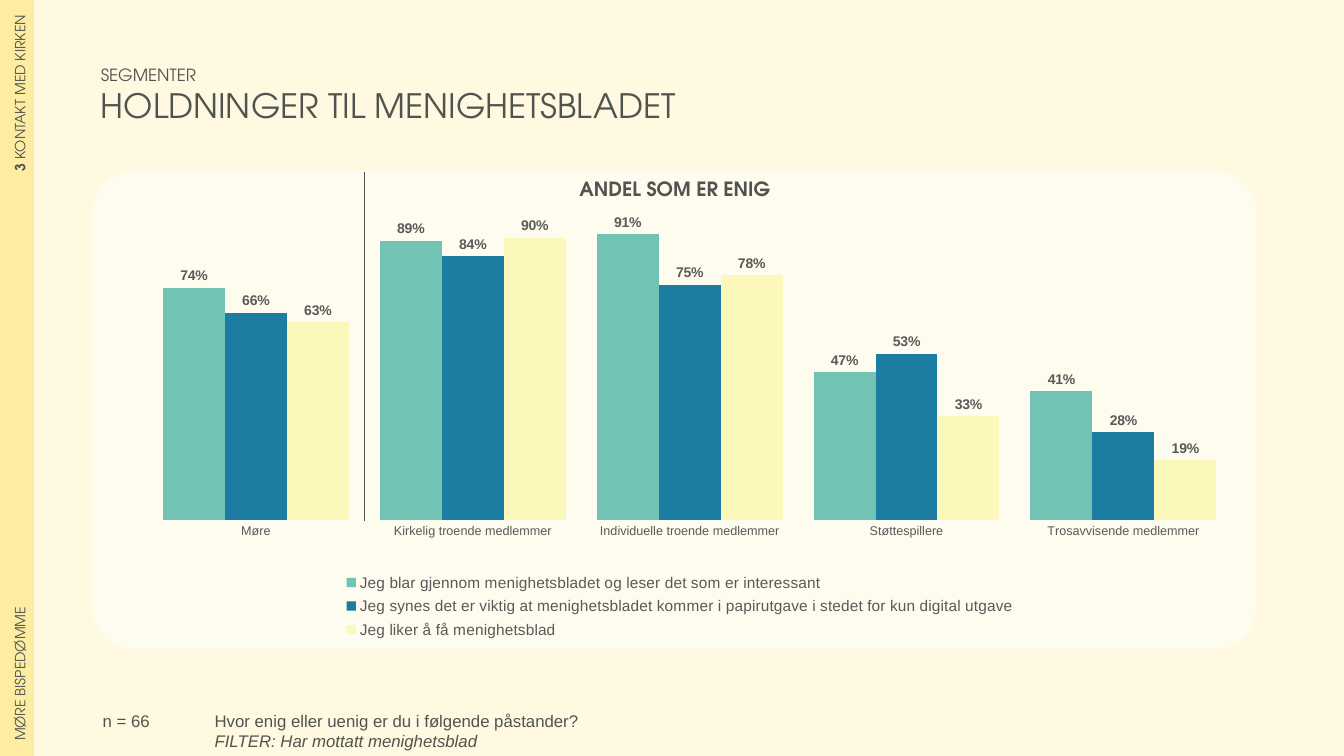
"""Build the slide on attitudes to the parish magazine, by segment."""
from lxml import etree
from pptx import Presentation
from pptx.chart.data import CategoryChartData
from pptx.dml.color import RGBColor
from pptx.enum import chart as ch, shapes as sh, text as tx
from pptx.oxml import ns
from pptx.util import Inches, Pt

INK = RGBColor(0x51, 0x53, 0x50)
GREY = RGBColor(0x59, 0x59, 0x59)
CREAM = RGBColor(0xFE, 0xF9, 0xE0)
WHITE = RGBColor(0xFF, 0xFF, 0xFF)
SAND = RGBColor(0xFD, 0xED, 0xA2)
TEAL = RGBColor(0x71, 0xC3, 0xB3)
BLUE = RGBColor(0x1C, 0x7C, 0xA1)
LEMON = RGBColor(0xFC, 0xF7, 0xBA)
HEAD, BODY = "TeX Gyre Adventor", "Arial"
PLAIN = "{2D5ABB26-0587-4C30-8999-92F81FD0307C}"

PANEL = (0.92, 1.7, 11.54, 4.74)
PLOT = (0.047, 0.073, 0.932, 0.657)
KEY = (0.205, 0.83, 0.6, 0.16)
GROUPS = ["Møre", "Kirkelig troende medlemmer", "Individuelle troende medlemmer",
          "Støttespillere", "Trosavvisende medlemmer"]
SERIES = [
    ("Jeg blar gjennom menighetsbladet og leser det som er interessant",
     (0.74, 0.89, 0.91, 0.47, 0.41), TEAL),
    ("Jeg synes det er viktig at menighetsbladet kommer i papirutgave "
     "i stedet for kun digital utgave",
     (0.66, 0.84, 0.75, 0.53, 0.28), BLUE),
    ("Jeg liker å få menighetsblad",
     (0.63, 0.9, 0.78, 0.33, 0.19), LEMON),
]


def inch(box):
    return [Inches(v) for v in box]


def style(font, size, face=BODY, color=INK, bold=False, slant=False):
    font.size, font.name = Pt(size), face
    font.bold, font.italic = bold, slant
    font.color.rgb = color


def write(frame, lines, align=tx.PP_ALIGN.LEFT):
    frame.word_wrap = True
    frame.auto_size = tx.MSO_AUTO_SIZE.NONE
    frame.text = "\n".join(line for line, _ in lines)
    for para, (_, look) in zip(frame.paragraphs, lines):
        para.alignment = align
        for run in para.runs:
            style(run.font, **look)


def add_text(slide, box, lines, align=tx.PP_ALIGN.LEFT):
    write(slide.shapes.add_textbox(*inch(box)).text_frame, lines, align)


def add_title(slide):
    title = slide.shapes.title
    title.left, title.top, title.width, title.height = inch((0.9, 0.59, 10.55, 0.71))
    write(title.text_frame, [
        ("SEGMENTER", dict(size=12, face=HEAD)),
        ("HOLDNINGER TIL MENIGHETSBLADET", dict(size=24, face=HEAD))])
    title.text_frame.vertical_anchor = tx.MSO_ANCHOR.MIDDLE


def add_panel(slide):
    panel = slide.shapes.add_shape(sh.MSO_SHAPE.ROUNDED_RECTANGLE, *inch(PANEL))
    panel.adjustments[0] = 0.084
    panel.shadow.inherit = False
    panel.line.fill.background()
    panel.fill.solid()
    panel.fill.fore_color.rgb = WHITE
    tint = panel.fill._xPr.find(".//" + ns.qn("a:srgbClr"))
    etree.SubElement(tint, ns.qn("a:alpha"), val="50000")


def place(node, index, box, inner=False):
    """Give a chart part a fixed layout in fractions of the chart."""
    for old in node.findall(ns.qn("c:layout")):
        node.remove(old)
    layout = etree.Element(ns.qn("c:layout"))
    manual = etree.SubElement(layout, ns.qn("c:manualLayout"))
    rules = [("layoutTarget", "inner")] if inner else []
    rules += [("xMode", "edge"), ("yMode", "edge")]
    rules += zip("xywh", map(str, box))
    for tag, val in rules:
        etree.SubElement(manual, ns.qn("c:" + tag), val=val)
    node.insert(index, layout)


def add_bars(slide):
    data = CategoryChartData(number_format="0%")
    data.categories = GROUPS
    for name, vals, _ in SERIES:
        data.add_series(name, vals)
    chart = slide.shapes.add_chart(
        ch.XL_CHART_TYPE.COLUMN_CLUSTERED, *inch(PANEL), data).chart
    chart.has_title = False
    style(chart.font, 10, HEAD)

    plot = chart.plots[0]
    plot.gap_width, plot.overlap = 50, 0
    plot.vary_by_categories = False
    for bars, (_, _, color) in zip(plot.series, SERIES):
        bars.format.fill.solid()
        bars.format.fill.fore_color.rgb = color
        labels = bars.data_labels
        labels.show_value = True
        labels.number_format, labels.number_format_is_linked = "0%", False
        labels.position = ch.XL_LABEL_POSITION.OUTSIDE_END
        style(labels.font, 10, color=GREY, bold=True)

    scale = chart.value_axis
    scale.minimum_scale, scale.maximum_scale = 0, 1
    scale.has_major_gridlines = False
    scale.visible = False
    axis = chart.category_axis
    axis.major_tick_mark = ch.XL_TICK_MARK.NONE
    axis.format.line.fill.background()
    style(axis.tick_labels.font, 9, color=GREY)

    chart.has_legend = True
    legend = chart.legend
    legend.position = ch.XL_LEGEND_POSITION.RIGHT
    legend.include_in_layout = False
    style(legend.font, 11, color=GREY)
    place(legend._element, 1, KEY)
    place(chart._chartSpace.find(".//" + ns.qn("c:plotArea")), 0, PLOT, True)


def add_strip(slide):
    table = slide.shapes.add_table(2, 1, *inch((0, 0, 0.34, 7.5))).table
    table.first_row = table.horz_banding = False
    table._tbl.tblPr.find(ns.qn("a:tableStyleId")).text = PLAIN
    parts = [([("3", True), (" KONTAKT MED KIRKEN", False)], tx.PP_ALIGN.RIGHT),
             ([("MØRE BISPEDØMME", False)], tx.PP_ALIGN.LEFT)]
    for row, (runs, align) in enumerate(parts):
        cell = table.cell(row, 0)
        cell.fill.solid()
        cell.fill.fore_color.rgb = SAND
        cell.vertical_anchor = tx.MSO_ANCHOR.MIDDLE
        cell.margin_left = cell.margin_right = Inches(0.15)
        cell.margin_top = cell.margin_bottom = Inches(0.15)
        cell._tc.get_or_add_tcPr().set("vert", "vert270")
        para = cell.text_frame.paragraphs[0]
        para.alignment = align
        for words, bold in runs:
            run = para.add_run()
            run.text = words
            style(run.font, 10, HEAD, bold=bold)


def add_rule(slide):
    left, _, width, _ = PANEL
    x = left + width * (PLOT[0] + PLOT[2] / len(GROUPS))
    rule = slide.shapes.add_connector(
        sh.MSO_CONNECTOR.STRAIGHT, *inch((x, 1.71, x, 5.17)))
    rule.line.color.rgb = INK
    rule.line.width = Pt(0.5)
    etree.SubElement(rule._element.spPr, ns.qn("a:effectLst"))


def main():
    deck = Presentation()
    deck.slide_width, deck.slide_height = Inches(13.33), Inches(7.5)
    slide = deck.slides.add_slide(deck.slide_layouts[5])
    slide.background.fill.solid()
    slide.background.fill.fore_color.rgb = CREAM
    add_panel(slide)
    add_bars(slide)
    add_strip(slide)
    add_title(slide)
    add_text(slide, (2.03, 7, 10.39, 0.27), [
        ("Hvor enig eller uenig er du i følgende påstander?", dict(size=12)),
        ("FILTER: Har mottatt menighetsblad", dict(size=12, slant=True))])
    add_text(slide, (0.92, 7, 1.43, 0.27), [("n = 66", dict(size=12))])
    add_text(slide, (0.93, 1.71, 11.53, 0.34), [
        ("ANDEL SOM ER ENIG", dict(size=14, face=HEAD, bold=True))],
        tx.PP_ALIGN.CENTER)
    add_rule(slide)
    deck.save("out.pptx")


if __name__ == "__main__":
    main()
